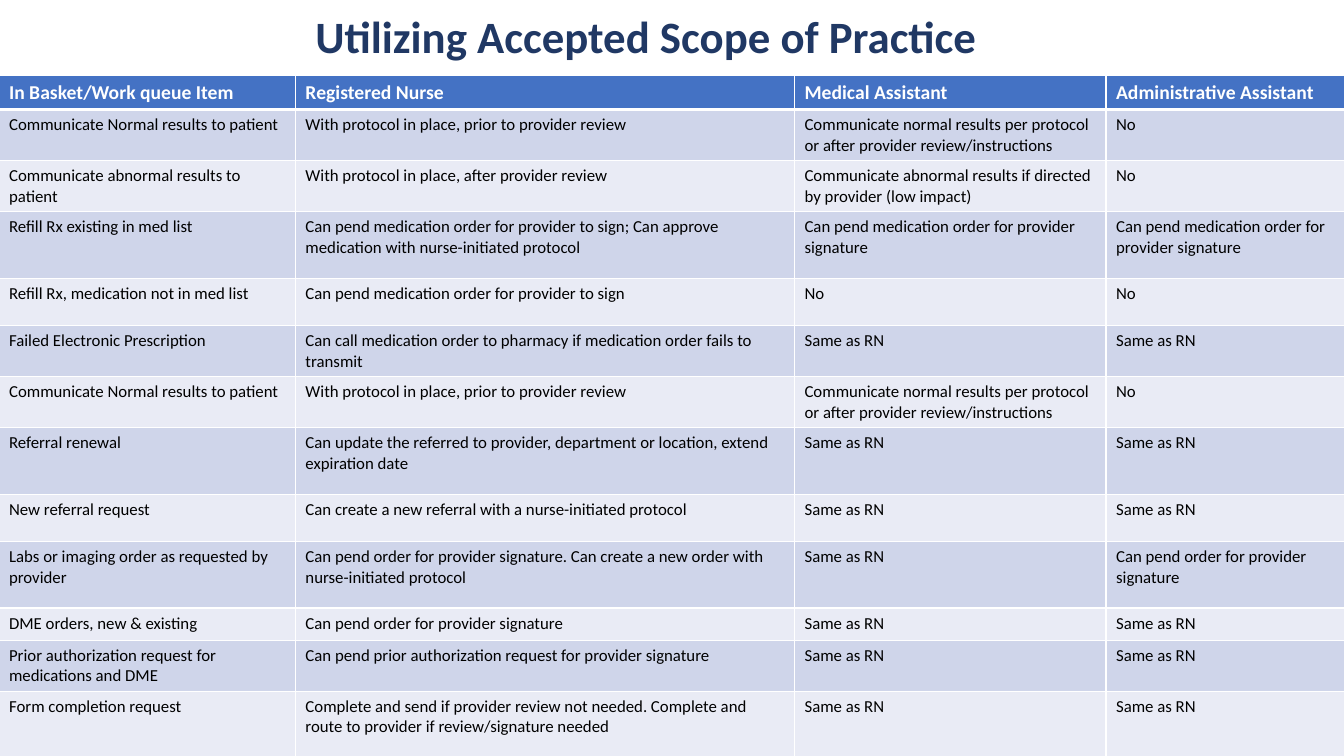
from typing import NamedTuple

import pptx
import pptx.dml.color
import pptx.enum.text
import pptx.oxml
import pptx.oxml.ns
import pptx.presentation
import pptx.slide
import pptx.table
import pptx.text.text
import pptx.util

Inches = pptx.util.Inches
Pt = pptx.util.Pt
RGBColor = pptx.dml.color.RGBColor

NAVY = RGBColor(0x20, 0x38, 0x64)
HEADER_BLUE = RGBColor(0x44, 0x72, 0xC4)
BAND_DARK = RGBColor(0xCF, 0xD5, 0xEA)
BAND_LIGHT = RGBColor(0xE9, 0xEB, 0xF5)
WHITE = RGBColor(0xFF, 0xFF, 0xFF)
BLACK = RGBColor(0x00, 0x00, 0x00)

FONT = "Calibri"
ONE_LINE, TWO_LINES, TALL = 0.32, 0.47, 0.66
COLUMN_WIDTHS = (2.94, 4.95, 3.09, 2.37)
SAME = "Same as RN"


class ScopeRow(NamedTuple):
    height: float
    item: str
    nurse: str
    medical_assistant: str
    administrative_assistant: str


class TextStyle(NamedTuple):
    size: float
    color: RGBColor
    bold: bool


TITLE_STYLE = TextStyle(32, NAVY, True)
HEADER_STYLE = TextStyle(14, WHITE, True)
BODY_STYLE = TextStyle(12, BLACK, False)

NORMAL_RESULTS = ScopeRow(
    TWO_LINES, "Communicate Normal results to patient",
    "With protocol in place, prior to provider review",
    "Communicate normal results per protocol or after provider review/instructions", "No")

ROWS = (
    ScopeRow(ONE_LINE, "In Basket/Work queue Item", "Registered Nurse",
             "Medical Assistant", "Administrative Assistant"),
    NORMAL_RESULTS,
    ScopeRow(TWO_LINES, "Communicate abnormal results to patient",
             "With protocol in place, after provider review",
             "Communicate abnormal results if directed by provider (low impact)", "No"),
    ScopeRow(TALL, "Refill Rx existing in med list",
             "Can pend medication order for provider to sign; "
             "Can approve medication with nurse-initiated protocol",
             "Can pend medication order for provider signature",
             "Can pend medication order for provider signature"),
    ScopeRow(TWO_LINES, "Refill Rx, medication not in med list",
             "Can pend medication order for provider to sign", "No", "No"),
    ScopeRow(TWO_LINES, "Failed Electronic Prescription",
             "Can call medication order to pharmacy if medication order fails to transmit",
             SAME, SAME),
    NORMAL_RESULTS,
    ScopeRow(TALL, "Referral renewal",
             "Can update the referred to provider, department or location, "
             "extend expiration date", SAME, SAME),
    ScopeRow(TWO_LINES, "New referral request",
             "Can create a new referral with a nurse-initiated protocol", SAME, SAME),
    ScopeRow(TALL, "Labs or imaging order as requested by provider",
             "Can pend order for provider signature. "
             "Can create a new order with nurse-initiated protocol",
             SAME, "Can pend order for provider signature"),
    ScopeRow(ONE_LINE, "DME orders, new & existing",
             "Can pend order for provider signature", SAME, SAME),
    ScopeRow(TWO_LINES, "Prior authorization request for medications and DME",
             "Can pend prior authorization request for provider signature", SAME, SAME),
    ScopeRow(TALL, "Form completion request",
             "Complete and send if provider review not needed. "
             "Complete and route to provider if review/signature needed", SAME, SAME),
)


def add_run(paragraph: pptx.text.text._Paragraph, text: str, style: TextStyle) -> None:
    run = paragraph.add_run()
    run.text = text
    run.font.name = FONT
    run.font.size = Pt(style.size)
    run.font.bold = style.bold
    run.font.color.rgb = style.color


def set_borders(cell: pptx.table._Cell, top: float, bottom: float) -> None:
    """Give the cell white borders, 1 pt wide at the sides; call before filling."""
    properties = cell._tc.get_or_add_tcPr()
    for side, width in (("L", 1), ("R", 1), ("T", top), ("B", bottom)):
        properties.append(pptx.oxml.parse_xml(
            f'<a:ln{side} {pptx.oxml.ns.nsdecls("a")} w="{Pt(width)}">'
            f'<a:solidFill><a:srgbClr val="{WHITE}"/></a:solidFill></a:ln{side}>'))


def add_title(slide: pptx.slide.Slide) -> None:
    title = slide.shapes.title
    title.left, title.top = Inches(0.66), Inches(0.07)
    title.width, title.height = Inches(11.5), Inches(0.64)
    title.text_frame.vertical_anchor = pptx.enum.text.MSO_ANCHOR.MIDDLE
    title.text_frame.auto_size = pptx.enum.text.MSO_AUTO_SIZE.NONE
    paragraph = title.text_frame.paragraphs[0]
    paragraph.alignment = pptx.enum.text.PP_ALIGN.CENTER
    paragraph.line_spacing = 0.9
    add_run(paragraph, "Utilizing Accepted Scope of Practice", TITLE_STYLE)


def add_scope_table(slide: pptx.slide.Slide) -> None:
    table = slide.shapes.add_table(
        len(ROWS), len(COLUMN_WIDTHS), Inches(-0.01), Inches(0.75),
        Inches(sum(COLUMN_WIDTHS)), Inches(sum(row.height for row in ROWS))).table
    for column, width in zip(table.columns, COLUMN_WIDTHS):
        column.width = Inches(width)
    for row_index, row in enumerate(ROWS):
        table.rows[row_index].height = Inches(row.height)
        is_header = row_index == 0
        band = BAND_DARK if row_index % 2 else BAND_LIGHT
        for column_index, text in enumerate(row[1:]):
            cell = table.cell(row_index, column_index)
            set_borders(cell, top=3 if row_index == 1 else 1, bottom=3 if is_header else 1)
            cell.fill.solid()
            cell.fill.fore_color.rgb = HEADER_BLUE if is_header else band
            add_run(cell.text_frame.paragraphs[0], text,
                    HEADER_STYLE if is_header else BODY_STYLE)


def main() -> None:
    presentation = pptx.Presentation()
    presentation.slide_width, presentation.slide_height = Inches(13.33), Inches(7.5)
    slide = presentation.slides.add_slide(presentation.slide_layouts.get_by_name("Title Only"))
    add_title(slide)
    add_scope_table(slide)
    presentation.save("out.pptx")


if __name__ == "__main__":
    main()
